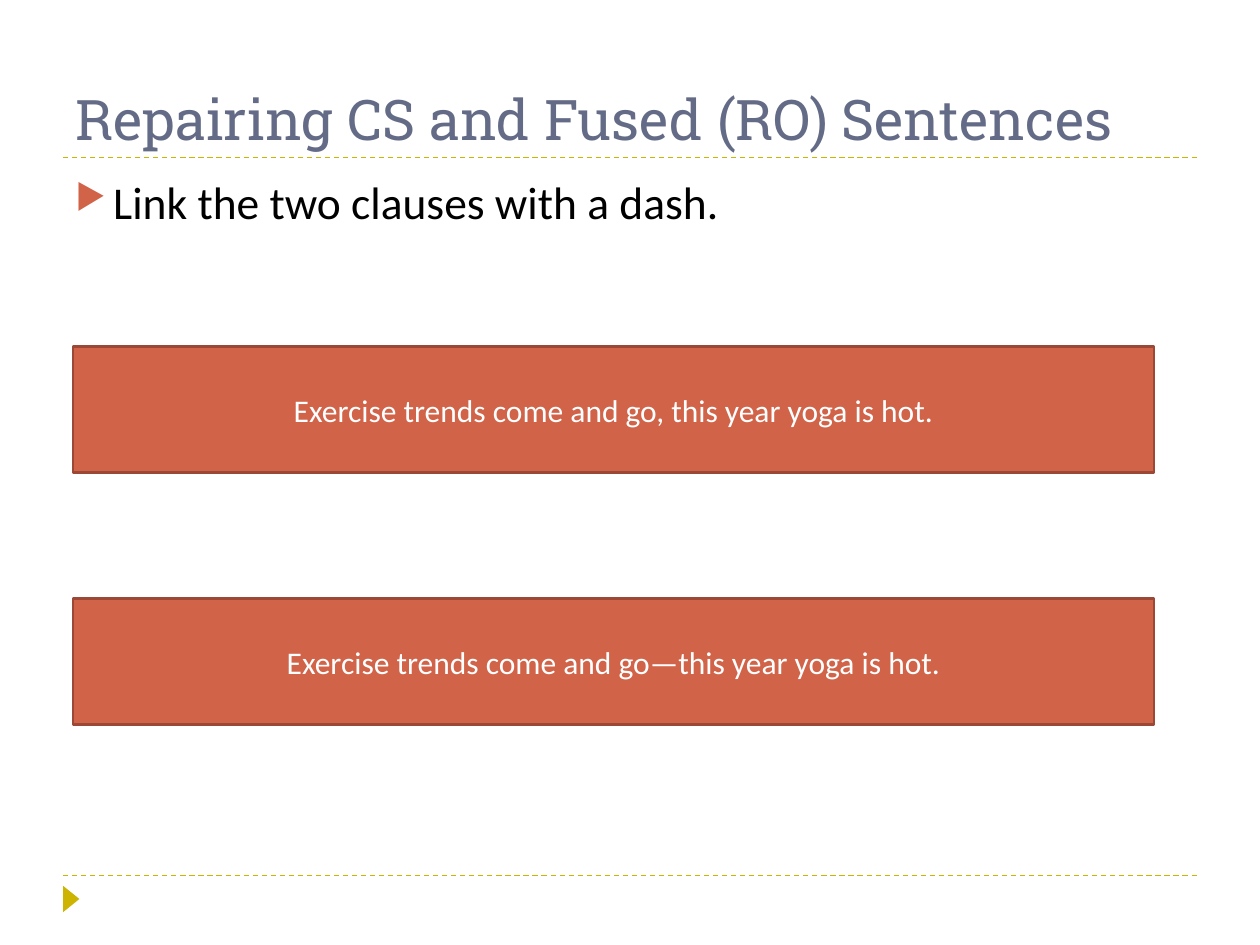
from lxml import etree
from pptx import Presentation
from pptx.dml.color import RGBColor
from pptx.enum.dml import MSO_LINE
from pptx.enum.shapes import MSO_CONNECTOR, MSO_SHAPE
from pptx.enum.text import MSO_ANCHOR, PP_ALIGN
from pptx.oxml.ns import qn
from pptx.util import Inches, Pt

WHITE = RGBColor(0xFF, 0xFF, 0xFF)
BLACK = RGBColor(0x00, 0x00, 0x00)
SLATE = RGBColor(0x64, 0x6B, 0x86)
GOLD = RGBColor(0xCC, 0xB4, 0x00)
RUST = RGBColor(0xD1, 0x63, 0x49)
DARK_RUST = RGBColor(0x9B, 0x49, 0x36)

LEFT, WIDTH = 0.5, 9
EXAMPLES = (
    "Exercise trends come and go, this year yoga is hot.",
    "Exercise trends come and go—this year yoga is hot.",
)


def write_text(shape, text, anchor, color, **font_values):
    frame = shape.text_frame
    frame.word_wrap = True
    frame.vertical_anchor = anchor
    paragraph = frame.paragraphs[0]
    run = paragraph.add_run()
    run.text = text
    for name, value in font_values.items():
        setattr(run.font, name, value)
    run.font.color.rgb = color
    return paragraph


def add_bullet(paragraph, character, color, percent, indent):
    properties = paragraph._p.get_or_add_pPr()
    properties.set("marL", str(Inches(indent)))
    properties.set("indent", str(-Inches(indent)))
    bullet_color = etree.SubElement(properties, qn("a:buClr"))
    etree.SubElement(bullet_color, qn("a:srgbClr"), val=str(color))
    etree.SubElement(properties, qn("a:buSzPct"), val=str(percent * 1000))
    etree.SubElement(properties, qn("a:buChar"), char=character)


def add_dashed_rule(slide, left, top, width):
    rule = slide.shapes.add_connector(
        MSO_CONNECTOR.STRAIGHT,
        Inches(left), Inches(top), Inches(left + width), Inches(top))
    rule.line.color.rgb = GOLD
    rule.line.width = Pt(0.75)
    rule.line.dash_style = MSO_LINE.DASH
    etree.SubElement(rule._element.spPr, qn("a:effectLst"))


def add_title(slide, left, top, width, height):
    title = slide.shapes.add_textbox(*map(Inches, (left, top, width, height)))
    write_text(title, "Repairing CS and Fused (RO) Sentences", MSO_ANCHOR.BOTTOM,
               SLATE, name="Roboto Slab", size=Pt(32))
    add_dashed_rule(slide, left, top + height, width)


def add_body(slide, left, top, width, height):
    body = slide.shapes.add_textbox(*map(Inches, (left, top, width, height)))
    paragraph = write_text(body, "Link the two clauses with a dash.", MSO_ANCHOR.TOP,
                           BLACK, name="Calibri", size=Pt(26))
    paragraph.space_before = Pt(6)
    add_bullet(paragraph, "▶", RUST, percent=76, indent=0.3)


def add_examples(slide, left, top, width, height, pitch):
    for index, sentence in enumerate(EXAMPLES):
        box = slide.shapes.add_shape(
            MSO_SHAPE.RECTANGLE,
            *map(Inches, (left, top + index * pitch, width, height)))
        box.shadow.inherit = False
        box.fill.solid()
        box.fill.fore_color.rgb = RUST
        box.line.color.rgb = DARK_RUST
        box.line.width = Pt(1.5)
        paragraph = write_text(box, sentence, MSO_ANCHOR.MIDDLE,
                               WHITE, name="Calibri", size=Pt(18))
        paragraph.alignment = PP_ALIGN.CENTER


def add_footer(slide, left, top, width):
    add_dashed_rule(slide, left, top, width)
    marker = slide.shapes.add_shape(
        MSO_SHAPE.ISOSCELES_TRIANGLE,
        *map(Inches, (left - 0.04, top + 0.12, 0.21, 0.13)))
    marker.rotation = 90
    marker.shadow.inherit = False
    marker.fill.solid()
    marker.fill.fore_color.rgb = GOLD
    marker.line.fill.background()


def main():
    presentation = Presentation()
    presentation.slide_width = Inches(10)
    presentation.slide_height = Inches(7.5)
    slide = presentation.slides.add_slide(presentation.slide_layouts[6])
    add_footer(slide, LEFT, 6.95, WIDTH)
    add_title(slide, LEFT, 0.17, WIDTH, 1.08)
    add_body(slide, LEFT, 1.33, WIDTH, 5.4)
    add_examples(slide, 0.58, 2.75, 8.58, 1, pitch=2)
    presentation.save("out.pptx")


if __name__ == "__main__":
    main()
